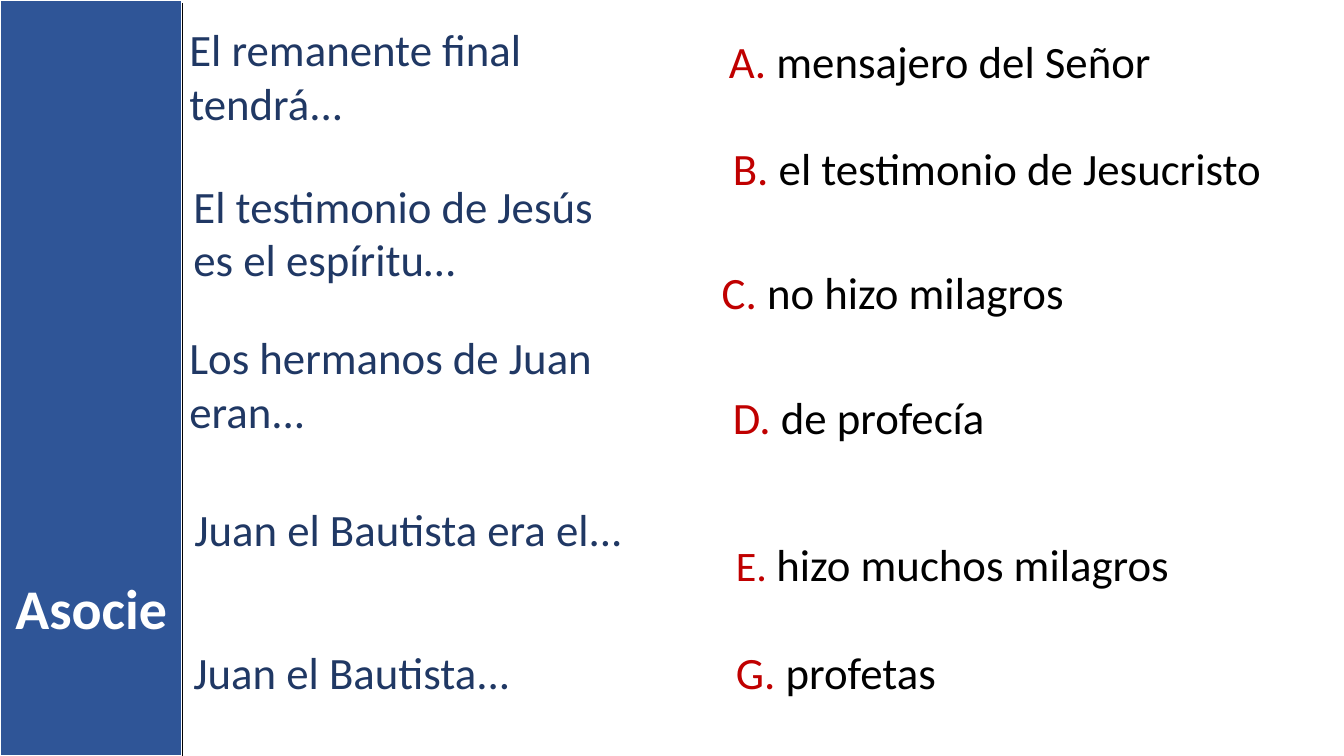
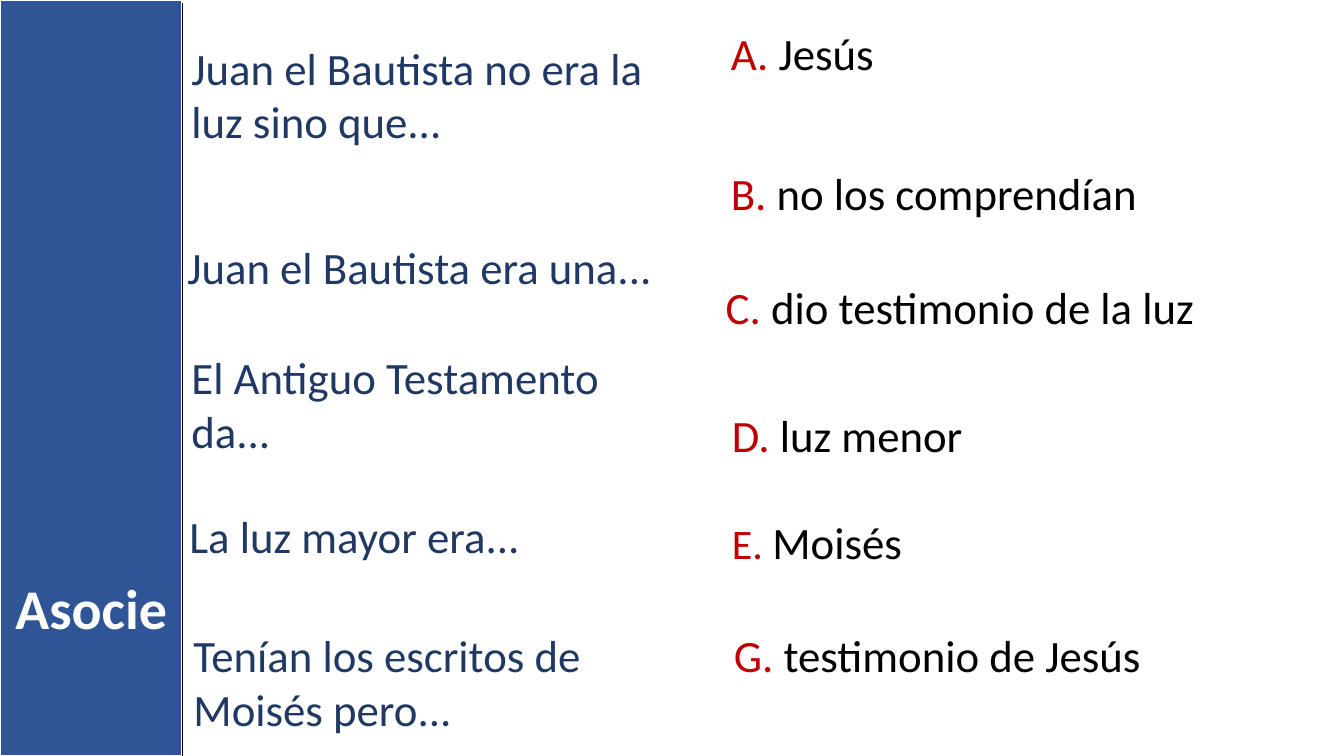
from lxml.etree import SubElement
from pptx import Presentation
from pptx.dml.color import RGBColor
from pptx.enum.shapes import MSO_CONNECTOR as Connector, MSO_SHAPE as Shape
from pptx.enum.text import MSO_ANCHOR as Anchor, MSO_AUTO_SIZE as AutoSize, PP_ALIGN as Align
from pptx.oxml.ns import qn
from pptx.util import Emu, Pt

PX = 9144
WIDTH, HEIGHT, BAND_WIDTH = 1333, 750, 181
COLORS = {"band": "2F5597", "prompt": "203864", "letter": "C00000",
          "answer": "000000", "edge": "000000", "white": "FFFFFF"}
FONT = "Calibri"

QUIZZES = [
    {"prompts": [
        (178, 17, 493, 2, "El remanente final tendrá..."),
        (182, 172, 462, 2, "El testimonio de Jesús es el espíritu…"),
        (178, 322, 460, 2, "Los hermanos de Juan eran..."),
        (183, 493, 460, 1, "Juan el Bautista era el..."),
        (182, 635, 441, 1, "Juan el Bautista...")],
     "answers": [
        (713, 29, 560, "A", "mensajero del Señor"),
        (717, 135, 592, "B", "el testimonio de Jesucristo"),
        (706, 258, 574, "C", "no hizo milagros"),
        (717, 382, 580, "D", "de profecía"),
        (720, 528, 553, "E", "hizo muchos milagros"),
        (720, 635, 559, "G", "profetas")]},
    {"prompts": [
        (180, 35, 510, 2, "Juan el Bautista no era la luz sino que..."),
        (176, 233, 493, 1, "Juan el Bautista era una..."),
        (180, 342, 489, 2, "El Antiguo Testamento da..."),
        (178, 500, 510, 1, "La luz mayor era..."),
        (182, 618, 441, 2, "Tenían los escritos de Moisés pero...")],
     "answers": [
        (715, 21, 585, "A", "Jesús"),
        (715, 159, 576, "B", "no los comprendían"),
        (710, 273, 580, "C", "dio testimonio de la luz"),
        (716, 400, 578, "D", "luz menor"),
        (716, 506, 605, "E", "Moisés"),
        (718, 618, 576, "G", "testimonio de Jesús")]},
]


def px(*lengths):
    """Turn whole pixels into EMU."""
    return [Emu(length * PX) for length in lengths]


def rgb(name):
    """Look up a named colour."""
    return RGBColor.from_string(COLORS[name])


def write(paragraph, text, *, color, size=32, bold=False):
    """Add a formatted run to a paragraph."""
    run = paragraph.add_run()
    run.text = text
    run.font.name, run.font.size, run.font.bold = FONT, Pt(size), bold
    run.font.color.rgb = rgb(color)


class QuizDeck:
    """Hold the matching-quiz style and the current slide."""

    def __init__(self):
        """Start an empty widescreen deck."""
        self.deck = Presentation()
        self.deck.slide_width, self.deck.slide_height = px(WIDTH, HEIGHT)
        self.slide = None

    def new_slide(self, title):
        """Add a slide with its side band, title and band edge."""
        self.slide = self.deck.slides.add_slide(self.deck.slide_layouts[5])
        band = self.band()
        self.title(title, band)
        self.band_edge()

    def band(self):
        """Draw the blue side band."""
        band = self.slide.shapes.add_shape(Shape.RECTANGLE, *px(0, 0, BAND_WIDTH, HEIGHT))
        band.shadow.inherit = False
        band.fill.solid()
        band.fill.fore_color.rgb = rgb("band")
        band.line.color.rgb = rgb("white")
        band.line.width = Pt(1.5)
        return band

    def title(self, text, band):
        """Place the title in front of the band."""
        title = self.slide.shapes.title
        title.left, title.top, title.width, title.height = px(0, 564, BAND_WIDTH, 77)
        band.element.addnext(title.element)
        frame = title.text_frame
        frame.word_wrap, frame.auto_size = True, AutoSize.SHAPE_TO_FIT_TEXT
        frame.vertical_anchor = Anchor.TOP
        frame.paragraphs[0].alignment = Align.CENTER
        write(frame.paragraphs[0], text, color="white", size=40, bold=True)

    def band_edge(self):
        """Draw the thin line along the band."""
        edge = self.slide.shapes.add_connector(
            Connector.STRAIGHT, *px(BAND_WIDTH, 3, BAND_WIDTH, HEIGHT))
        edge.line.color.rgb = rgb("edge")
        edge.line.width = Pt(1)
        SubElement(edge.element.spPr, qn("a:effectLst"))

    def text_box(self, left, top, width, lines=1):
        """Add a wrapping text box and return its paragraph."""
        box = self.slide.shapes.add_textbox(*px(left, top, width, 10 + 54 * lines))
        frame = box.text_frame
        frame.word_wrap, frame.auto_size = True, AutoSize.SHAPE_TO_FIT_TEXT
        return frame.paragraphs[0]

    def prompt(self, left, top, width, lines, text):
        """Add the opening of a sentence."""
        write(self.text_box(left, top, width, lines), text, color="prompt")

    def answer(self, left, top, width, letter, text):
        """Add a lettered ending."""
        paragraph = self.text_box(left, top, width)
        write(paragraph, f"{letter}. ", color="letter", size=30 if letter == "E" else 32)
        write(paragraph, text, color="answer")


def main():
    """Build and save the quiz slides."""
    quiz_deck = QuizDeck()
    for quiz in QUIZZES:
        quiz_deck.new_slide("Asocie")
        for prompt in quiz["prompts"]:
            quiz_deck.prompt(*prompt)
        for answer in quiz["answers"]:
            quiz_deck.answer(*answer)
    quiz_deck.deck.save("out.pptx")


if __name__ == "__main__":
    main()
